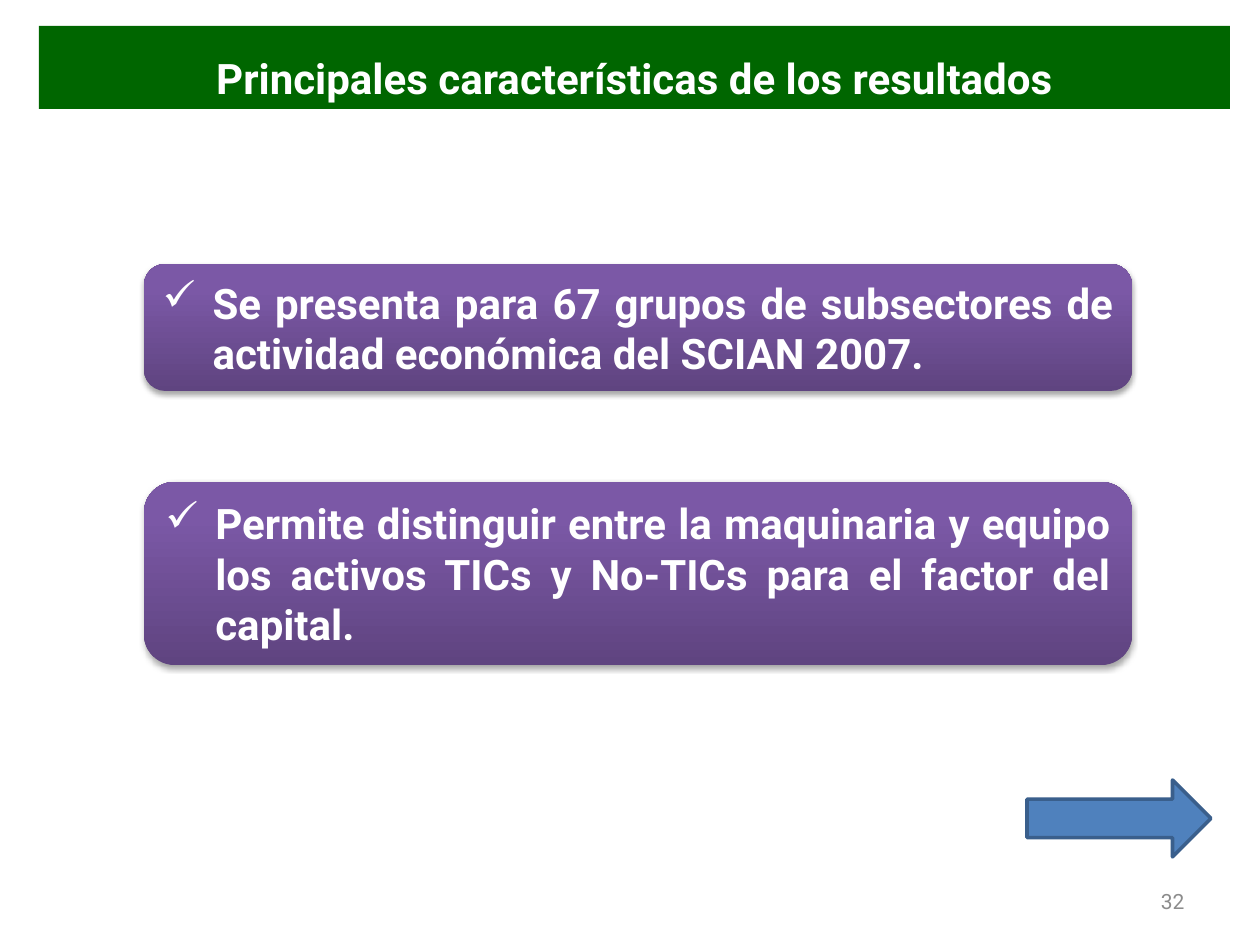
import pptx
import pptx.dml.color
import pptx.enum.shapes
import pptx.enum.text
import pptx.oxml
import pptx.oxml.ns
import pptx.util

RGBColor = pptx.dml.color.RGBColor
Align = pptx.enum.text.PP_ALIGN
Shape = pptx.enum.shapes.MSO_SHAPE
qn = pptx.oxml.ns.qn

GREEN = RGBColor(0x00, 0x66, 0x00)
WHITE = RGBColor(0xFF, 0xFF, 0xFF)
GRAY = RGBColor(0x8C, 0x8C, 0x8C)
BLUE = RGBColor(0x4F, 0x81, 0xBD)
DARK_BLUE = RGBColor(0x3A, 0x5F, 0x8C)
BLACK = RGBColor(0x00, 0x00, 0x00)
PURPLE_STOPS = [
    (0, RGBColor(0x5F, 0x44, 0x80)),
    (80, RGBColor(0x7B, 0x58, 0xA6)),
    (100, RGBColor(0x7C, 0x57, 0xA8)),
]
FONT = "Roboto"
PX_PER_INCH = 126
BULLET_INDENT = 50


def px(length):
    """Turn a length in px into EMU."""
    return pptx.util.Emu(round(length * 914400 / PX_PER_INCH))


def place(shape, box):
    """Move and size a shape to a box of left, top, width and height in px."""
    shape.left, shape.top, shape.width, shape.height = map(px, box)


def element(xml):
    """Parse a drawing element whose tag takes the a: prefix."""
    return pptx.oxml.parse_xml(xml.replace(" ", f" {pptx.oxml.ns.nsdecls('a')} ", 1))


def write(shape, text, size, color, alignment, bold=False):
    """Write one run in the first paragraph of a shape, centred vertically."""
    frame = shape.text_frame
    frame.word_wrap = True
    frame.auto_size = pptx.enum.text.MSO_AUTO_SIZE.NONE
    frame.vertical_anchor = pptx.enum.text.MSO_ANCHOR.MIDDLE
    paragraph = frame.paragraphs[0]
    paragraph.alignment = alignment
    run = paragraph.add_run()
    run.text = text
    run.font.name = FONT
    run.font.size = pptx.util.Pt(size)
    run.font.bold = bold
    run.font.color.rgb = color
    return paragraph


def add_check_bullet(paragraph):
    """Give a paragraph a hanging check mark."""
    properties = paragraph._p.get_or_add_pPr()
    properties.set("marL", str(px(BULLET_INDENT)))
    properties.set("indent", str(-px(BULLET_INDENT)))
    properties.append(element('<a:buChar char="✓"/>'))


def fill_purple(shape):
    """Fill a shape with the purple gradient, darkest at the bottom."""
    shape.fill.gradient()
    shape.fill.gradient_angle = 90
    stops = shape._element.spPr.find(".//" + qn("a:gsLst"))
    for stop in list(stops):
        stops.remove(stop)
    for position, color in PURPLE_STOPS:
        stops.append(element(
            f'<a:gs pos="{position * 1000}"><a:srgbClr val="{color}"/></a:gs>'))


def add_soft_shadow(shape):
    """Put a soft shadow below a shape."""
    shape.shadow.inherit = False
    effects = shape._element.spPr.find(qn("a:effectLst"))
    effects.append(element(
        f'<a:outerShdw blurRad="{pptx.util.Pt(3.1)}" dist="{pptx.util.Pt(1.8)}" '
        f'dir="5400000" rotWithShape="0"><a:srgbClr val="{BLACK}">'
        '<a:alpha val="35000"/></a:srgbClr></a:outerShdw>'))


def format_title(slide, box, text):
    """Turn the title placeholder into the green heading bar."""
    title = slide.shapes.title
    place(title, box)
    title.fill.solid()
    title.fill.fore_color.rgb = GREEN
    paragraph = write(title, text, 24, WHITE, Align.CENTER, bold=True)
    paragraph.line_spacing = pptx.util.Pt(40)


def add_feature(slide, box, text):
    """Add a purple card holding one checked statement."""
    card = slide.shapes.add_shape(Shape.ROUNDED_RECTANGLE, *map(px, box))
    fill_purple(card)
    card.line.fill.background()
    add_soft_shadow(card)
    add_check_bullet(card.text_frame.paragraphs[0])
    write(card, text, 24, WHITE, Align.JUSTIFY, bold=True)


def add_next_arrow(slide, box):
    """Add the blue arrow pointing to the following slide."""
    arrow = slide.shapes.add_shape(Shape.RIGHT_ARROW, *map(px, box))
    arrow.shadow.inherit = False
    arrow.fill.solid()
    arrow.fill.fore_color.rgb = BLUE
    arrow.line.color.rgb = DARK_BLUE
    arrow.line.width = pptx.util.Pt(2)


def add_page_number(slide, box, number):
    """Add the page number at the right of its box."""
    text_box = slide.shapes.add_textbox(*map(px, box))
    write(text_box, number, 12, GRAY, Align.RIGHT)


def main():
    """Build the slide and save it."""
    presentation = pptx.Presentation()
    presentation.slide_width, presentation.slide_height = px(1260), px(945)
    slide = presentation.slides.add_slide(presentation.slide_layouts[5])
    format_title(slide, (39, 26, 1191, 83), "Principales características de los resultados")
    add_feature(slide, (144, 264, 988, 127),
                "Se presenta para 67 grupos de subsectores de actividad económica "
                "del SCIAN 2007.")
    add_feature(slide, (144, 482, 988, 183),
                "Permite distinguir entre la maquinaria y equipo los activos TICs "
                "y No-TICs para el factor del capital.")
    add_next_arrow(slide, (1027, 780, 184, 77))
    add_page_number(slide, (903, 876, 294, 50), "32")
    presentation.save("out.pptx")


if __name__ == "__main__":
    main()
